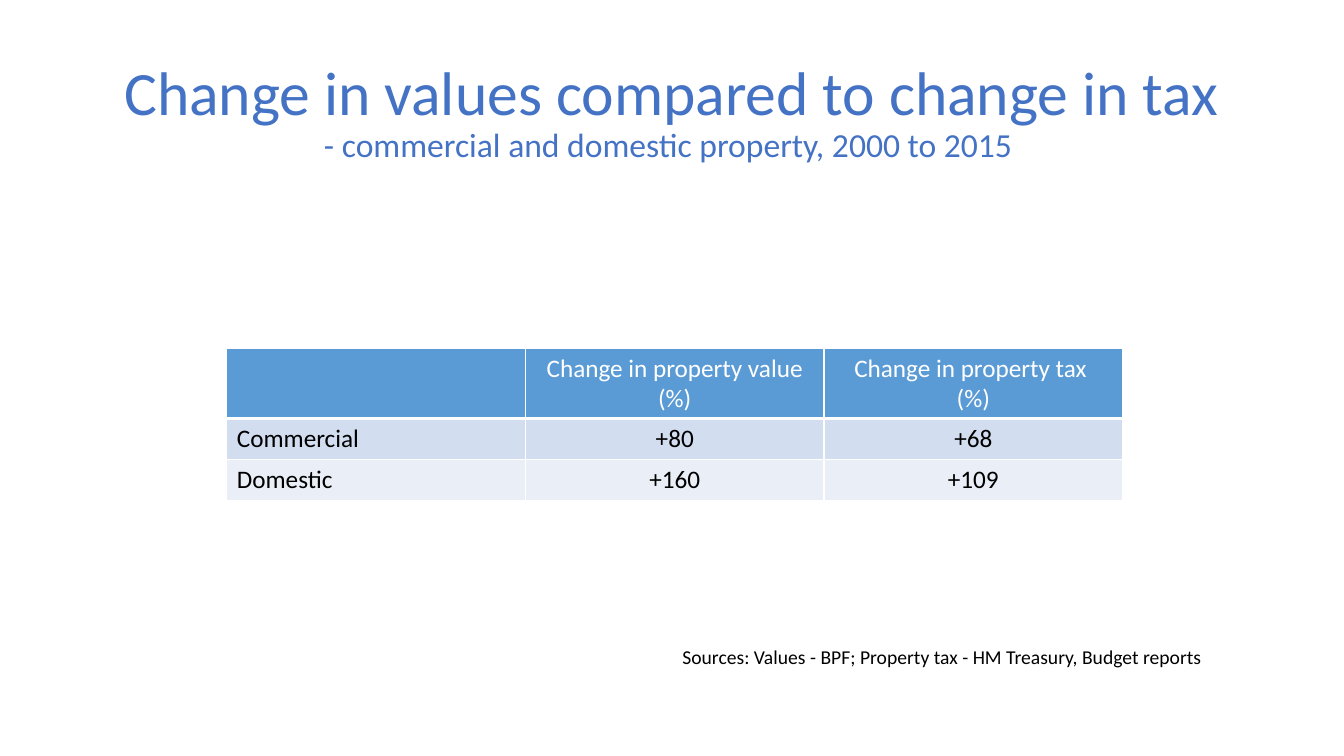
from lxml import etree
from pptx import Presentation
from pptx.dml.color import RGBColor
from pptx.enum.text import MSO_ANCHOR, MSO_AUTO_SIZE, PP_ALIGN
from pptx.oxml.ns import qn
from pptx.util import Pt

LEFT, CENTER = PP_ALIGN.LEFT, PP_ALIGN.CENTER
MIDDLE = MSO_ANCHOR.MIDDLE
GROW = MSO_AUTO_SIZE.SHAPE_TO_FIT_TEXT


def color(code):
    return RGBColor.from_string(code)


def write(para, text, size, code):
    run = para.add_run()
    run.text = text
    run.font.name = "Calibri"
    run.font.size = Pt(size)
    run.font.color.rgb = color(code)


deck = Presentation()
deck.slide_width, deck.slide_height = Pt(960), Pt(540)
slide = deck.slides.add_slide(deck.slide_layouts[6])

frame = slide.shapes.add_textbox(Pt(66), Pt(28.8), Pt(828), Pt(104.4)).text_frame
frame.word_wrap = True
frame.vertical_anchor = MIDDLE
para = frame.paragraphs[0]
para.alignment = CENTER
para.line_spacing = 0.9
write(para, "Change in values compared to change in tax", 44, "4472C4")
para.add_line_break()
write(para, "- commercial and domestic property, 2000 to 2015 ", 24, "4472C4")

rows = [
    ("5B9BD5", "FFFFFF", 50.4, [[], ["Change in property value (%)"],
                                ["Change in property tax ", "(%)"]]),
    ("D2DEEF", "000000", 29.2, [["Commercial"], ["+80"], ["+68"]]),
    ("EAEFF7", "000000", 29.2, [["Domestic"], ["+160"], ["+109"]]),
]
table = slide.shapes.add_table(3, 3, Pt(162), Pt(248.6), Pt(640), Pt(108.8)).table
for col in table.columns:
    col.width = Pt(213.33)
for r, (fill, ink, height, cells) in enumerate(rows):
    table.rows[r].height = Pt(height)
    for c, lines in enumerate(cells):
        cell = table.cell(r, c)
        props = cell._tc.get_or_add_tcPr()
        for side in ("lnL", "lnR", "lnT", "lnB"):
            width = 3 if r == 0 and side == "lnB" else 1
            line = etree.SubElement(props, qn("a:" + side), w=str(Pt(width)))
            solid = etree.SubElement(line, qn("a:solidFill"))
            etree.SubElement(solid, qn("a:srgbClr"), val="FFFFFF")
        cell.fill.solid()
        cell.fill.fore_color.rgb = color(fill)
        for i, text in enumerate(lines):
            frame = cell.text_frame
            para = frame.add_paragraph() if i else frame.paragraphs[0]
            para.alignment = CENTER if c else LEFT
            write(para, text, 18, ink)

frame = slide.shapes.add_textbox(Pt(480.3), Pt(457.2), Pt(392.4), Pt(24.5)).text_frame
frame.word_wrap = False
frame.auto_size = GROW
write(frame.paragraphs[0],
      "Sources: Values - BPF; Property tax - HM Treasury, Budget reports", 14, "000000")

deck.save("out.pptx")
